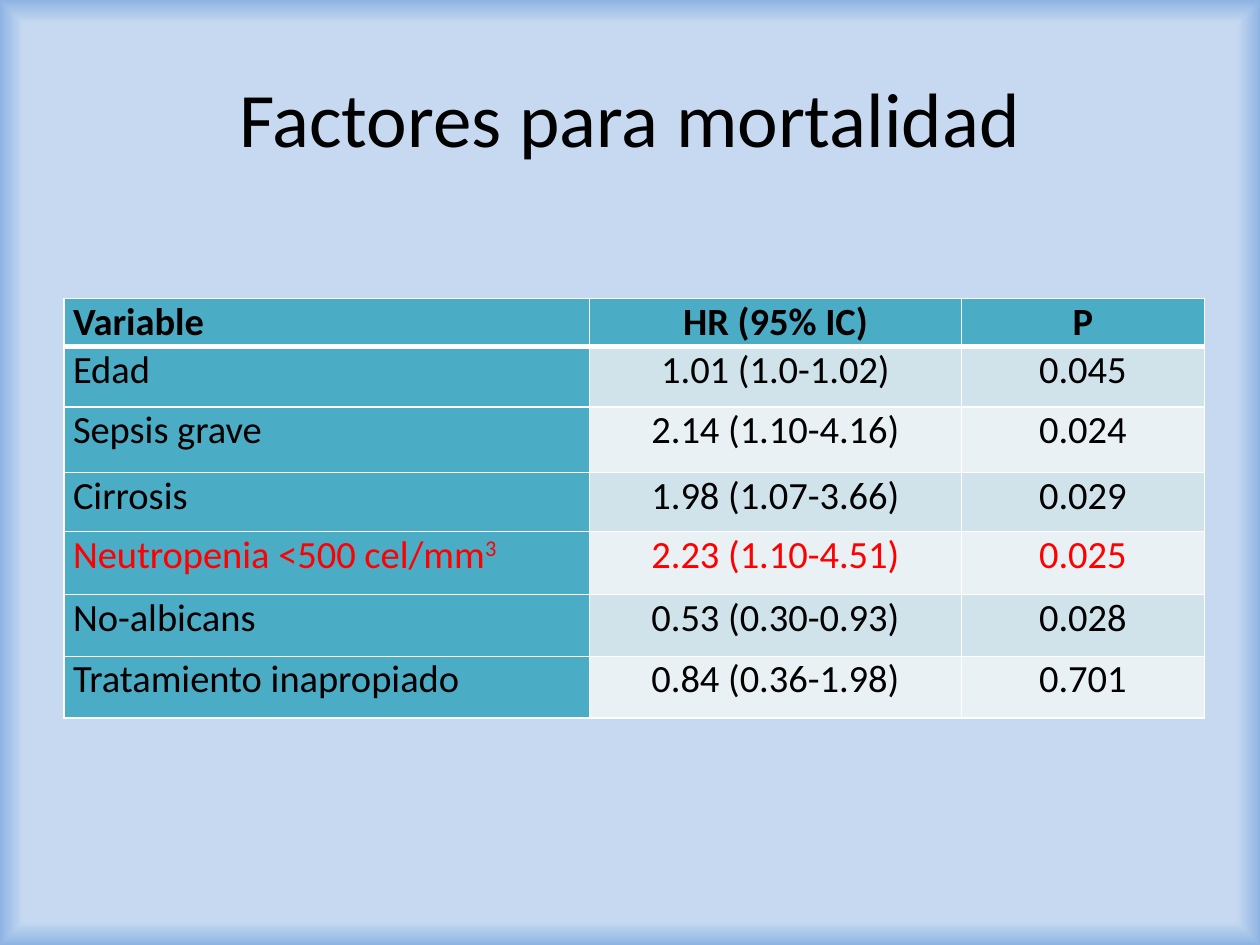
from typing import NamedTuple

from lxml import etree
from pptx import Presentation
from pptx.dml.color import RGBColor
from pptx.enum.text import MSO_ANCHOR, PP_ALIGN
from pptx.oxml.ns import qn
from pptx.util import Inches, Pt

LEFT, CENTER = PP_ALIGN.LEFT, PP_ALIGN.CENTER
TOP, MIDDLE = MSO_ANCHOR.TOP, MSO_ANCHOR.MIDDLE
FONT = "Calibri"
BLACK, RED, WHITE = "000000", "FF0000", "FFFFFF"
TEAL, BANDS = "4BACC6", ("D0E3EA", "E9F1F5")
PALE, EDGE = "C6D9F1", "8EB4E3"
COL_WIDTHS = (4.17, 2.95, 1.93)


class Row(NamedTuple):
    """One table row: its cells, height in inches and text format."""
    variable: str
    ratio: str
    p: str
    height: float
    color: str = BLACK
    bold: bool = False
    sup: str = ""


ROWS = (
    Row("Variable", "HR (95% IC)", "P", 0.38, bold=True),
    Row("Edad", "1.01 (1.0-1.02)", "0.045", 0.48),
    Row("Sepsis grave", "2.14 (1.10-4.16)", "0.024", 0.52),
    Row("Cirrosis", "1.98 (1.07-3.66)", "0.029", 0.47),
    Row("Neutropenia <500 cel/mm", "2.23 (1.10-4.51)", "0.025", 0.5, color=RED, sup="3"),
    Row("No-albicans", "0.53 (0.30-0.93)", "0.028", 0.49),
    Row("Tratamiento inapropiado", "0.84 (0.36-1.98)", "0.701", 0.49),
)


def rgb(value: str) -> RGBColor:
    """Turn a hex string into a colour."""
    return RGBColor.from_string(value)


def add_solid(parent, value: str) -> None:
    """Append a solid fill element to a line."""
    fill = etree.SubElement(parent, qn("a:solidFill"))
    etree.SubElement(fill, qn("a:srgbClr"), val=value)


def write(tf, text: str, *, size: float, color: str = BLACK, bold: bool = False,
          align=CENTER, sup: str = "") -> None:
    """Write one formatted paragraph with an optional superscript."""
    p = tf.paragraphs[0]
    p.alignment = align
    for part in filter(None, (text, sup)):
        r = p.add_run()
        r.text = part
        r.font.name, r.font.size, r.font.bold = FONT, Pt(size), bold
        r.font.color.rgb = rgb(color)
    if sup:
        r.font._element.set("baseline", "30000")


def set_borders(cell, bottom: float) -> None:
    """Give a cell white borders, with its own bottom width in points."""
    tc_pr = cell._tc.get_or_add_tcPr()
    for i, (side, width) in enumerate((("L", 1), ("R", 1), ("T", 1), ("B", bottom))):
        ln = etree.Element(qn(f"a:ln{side}"), w=str(Pt(width)))
        add_solid(ln, WHITE)
        tc_pr.insert(i, ln)


def set_background(s) -> None:
    """Fill the background with a pale gradient darkening at the edges."""
    s.background.fill.gradient()
    grad = s._element.find(".//" + qn("a:gradFill"))
    for child in list(grad):
        grad.remove(child)
    stops = etree.SubElement(grad, qn("a:gsLst"))
    for position, color in ((90, PALE), (92, PALE), (95, PALE), (100, EDGE)):
        stop = etree.SubElement(stops, qn("a:gs"), pos=str(position * 1000))
        etree.SubElement(stop, qn("a:srgbClr"), val=color)
    shape = etree.SubElement(grad, qn("a:path"), {"path": "shape"})
    etree.SubElement(shape, qn("a:fillToRect"), {side: "50000" for side in "ltrb"})


def add_title(s, text: str) -> None:
    """Place and format the title placeholder."""
    sp = s.shapes.title
    sp.left, sp.top, sp.width, sp.height = map(Inches, (0.5, 0.3, 9, 1.25))
    sp.text_frame.vertical_anchor = MIDDLE
    write(sp.text_frame, text, size=44)


def add_factor_table(s) -> None:
    """Draw the table of mortality factors."""
    height = sum(row.height for row in ROWS)
    table = s.shapes.add_table(len(ROWS), len(COL_WIDTHS), Inches(0.51), Inches(2.37),
                               Inches(sum(COL_WIDTHS)), Inches(height)).table
    for column, width in zip(table.columns, COL_WIDTHS):
        column.width = Inches(width)
    for i, row in enumerate(ROWS):
        table.rows[i].height = Inches(row.height)
        for j, text in enumerate((row.variable, row.ratio, row.p)):
            cell = table.cell(i, j)
            cell.margin_left = cell.margin_right = Inches(0.07)
            cell.margin_top = cell.margin_bottom = 0
            cell.vertical_anchor = TOP
            cell.fill.solid()
            cell.fill.fore_color.rgb = rgb(TEAL if 0 in (i, j) else BANDS[(i - 1) % 2])
            set_borders(cell, bottom=1 if i else 3)
            write(cell.text_frame, text, size=22, color=row.color, bold=row.bold,
                  align=CENTER if j else LEFT, sup="" if j else row.sup)
            if i == 1:
                cell._tc.tcPr.find(qn("a:lnT")).set("w", str(Pt(3)))


def main() -> None:
    """Build and save the slide."""
    prs = Presentation()
    prs.slide_width, prs.slide_height = Inches(10), Inches(7.5)
    s = prs.slides.add_slide(prs.slide_layouts[5])
    set_background(s)
    add_title(s, "Factores para mortalidad")
    add_factor_table(s)
    prs.save("out.pptx")


if __name__ == "__main__":
    main()
